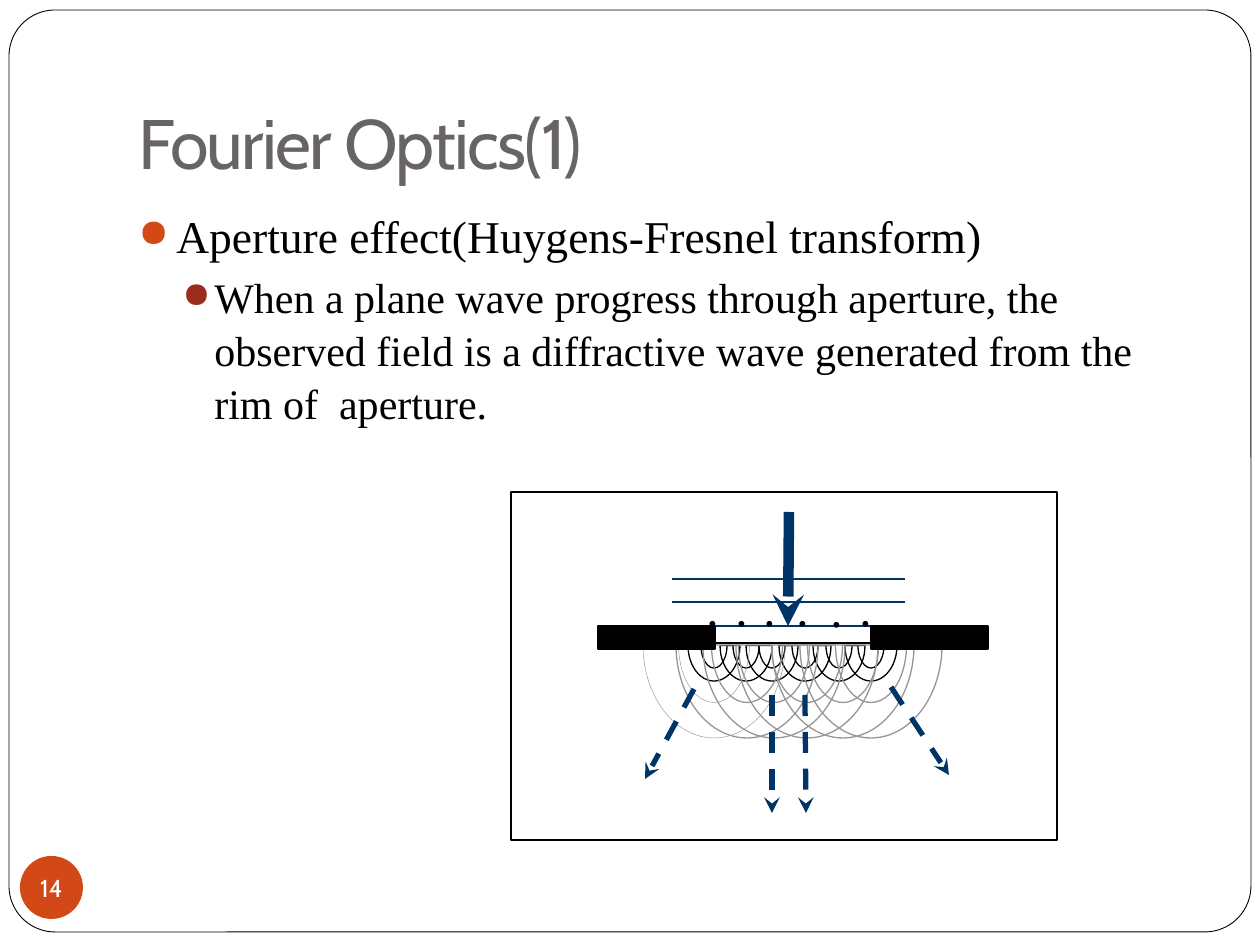
from lxml.etree import SubElement
from pptx import Presentation
from pptx.dml.color import RGBColor
from pptx.enum.dml import MSO_LINE
from pptx.enum.shapes import MSO_CONNECTOR, MSO_SHAPE
from pptx.enum.text import MSO_ANCHOR, PP_ALIGN
from pptx.oxml.ns import qn
from pptx.util import Pt

PX = 914400 / 126
SERIF, SANS = "Times New Roman", "Cabin"
BLACK, WHITE, NAVY, GRAY, ORANGE = "000000", "FFFFFF", "003366", "969696", "D34817"


def px(n):
    return round(n * PX)


def color(value):
    return RGBColor.from_string(value)


def add_shape(s, kind, box, fill=None, line=None, width=0.75):
    sp = s.shapes.add_shape(kind, *map(px, box))
    sp.shadow.inherit = False
    if fill:
        sp.fill.solid()
        sp.fill.fore_color.rgb = color(fill)
    else:
        sp.fill.background()
    if line:
        sp.line.color.rgb = color(line)
        sp.line.width = Pt(width)
    else:
        sp.line.fill.background()
    return sp


def add_line(s, start, end, line=NAVY, width=1.25, arrow=False, dash=False):
    c = s.shapes.add_connector(MSO_CONNECTOR.STRAIGHT, *map(px, start + end))
    c.line.color.rgb = color(line)
    c.line.width = Pt(width)
    if dash:
        c.line.dash_style = MSO_LINE.DASH
    if arrow:
        SubElement(c.line._get_or_add_ln(), qn("a:tailEnd"), type="stealth")
    SubElement(c._element.spPr, qn("a:effectLst"))


def format_text(p, size, font, fill):
    for r in p.runs:
        r.font.size = Pt(size)
        r.font.name = font
        r.font.color.rgb = color(fill)


def add_text(s, box, text, size, font, fill):
    sp = s.shapes.add_textbox(*map(px, box))
    tf = sp.text_frame
    tf.word_wrap = True
    tf.text = text
    format_text(tf.paragraphs[0], size, font, fill)
    return tf


def add_bullet(p, left, hanging, fill):
    pPr = p._p.get_or_add_pPr()
    pPr.set("marL", str(px(left)))
    pPr.set("indent", str(-px(hanging)))
    clr = SubElement(pPr, qn("a:buClr"))
    SubElement(clr, qn("a:srgbClr"), val=fill)
    SubElement(pPr, qn("a:buSzPct"), val="85000")
    SubElement(pPr, qn("a:buChar"), char="●")


def add_title(s):
    tf = add_text(s, (126, 38, 1071, 158), "Fourier Optics(1)", 40, SANS, "696464")
    tf.vertical_anchor = MSO_ANCHOR.BOTTOM
    tf.margin_bottom = px(13)
    tf.paragraphs[0].runs[0].font._element.set("spc", "-100")


def add_body(s):
    tf = add_text(s, (126, 199, 1071, 630),
                  "Aperture effect(Huygens-Fresnel transform)", 26, SERIF, BLACK)
    first, second = tf.paragraphs[0], tf.add_paragraph()
    second.level = 1
    second.text = ("When a plane wave progress through aperture, the observed field "
                   "is a diffractive wave generated from the rim of  aperture.")
    format_text(second, 24, SERIF, BLACK)
    for p, before in ((first, 5.8), (second, 3.7)):
        p.line_spacing = 1.05
        p.space_before = Pt(before)
    add_bullet(first, 38, 38, ORANGE)
    add_bullet(second, 76, 32, "9B2D1F")


def add_page_number(s):
    sp = add_shape(s, MSO_SHAPE.OVAL, (20, 856, 63, 63), ORANGE)
    tf = sp.text_frame
    tf.margin_left = tf.margin_right = tf.margin_top = tf.margin_bottom = 0
    tf.word_wrap = False
    tf.vertical_anchor = MSO_ANCHOR.MIDDLE
    tf.text = "14"
    tf.paragraphs[0].alignment = PP_ALIGN.CENTER
    format_text(tf.paragraphs[0], 14, SANS, WHITE)


def add_wavelets(s, centers, top, width, height, line):
    """Half rings that open downwards from the aperture."""
    for x in centers:
        arc = add_shape(s, MSO_SHAPE.BLOCK_ARC, (x - width / 2, top, width, height), line=line)
        arc.rotation = 180


def add_diagram(s):
    for left, y in ((672, 579), (672, 602), (676, 626)):
        add_line(s, (left, y), (left + 233, y))
    add_line(s, (714, 643), (871, 643), BLACK, 0.75)
    add_line(s, (789, 512), (788, 626), width=6, arrow=True)

    for x, y in ((694, 571), (723, 571), (751, 571), (784, 571), (818, 572), (847, 571)):
        add_text(s, (x, y, 50, 116), ".", 28, SERIF, BLACK)

    centers = (714, 746, 772, 805, 839, 871)
    add_wavelets(s, centers, 610, 52, 71, BLACK)
    add_wavelets(s, (714, 747, 774, 807, 843, 871), 552, 142, 186, GRAY)
    s.shapes[-6].line.width = Pt(0.25)  # faint leftmost wavelet

    for left in (871, 598):
        add_shape(s, MSO_SHAPE.RECTANGLE, (left, 626, 117, 23), BLACK, BLACK)
    for start, end in (((772, 695), (772, 813)), ((805, 695), (806, 813)),
                       ((694, 689), (645, 779)), ((891, 687), (949, 775))):
        add_line(s, start, end, width=3, arrow=True, dash=True)
    add_shape(s, MSO_SHAPE.RECTANGLE, (511, 492, 546, 348), line=BLACK, width=1)


def main():
    prs = Presentation()
    prs.slide_width, prs.slide_height = px(1260), px(945)
    s = prs.slides.add_slide(prs.slide_layouts[6])
    border = add_shape(s, MSO_SHAPE.ROUNDED_RECTANGLE, (9, 10, 1242, 922), WHITE, BLACK, 0.5)
    border.adjustments[0] = 0.05
    add_title(s)
    add_page_number(s)
    add_body(s)
    add_diagram(s)
    prs.save("out.pptx")


if __name__ == "__main__":
    main()
